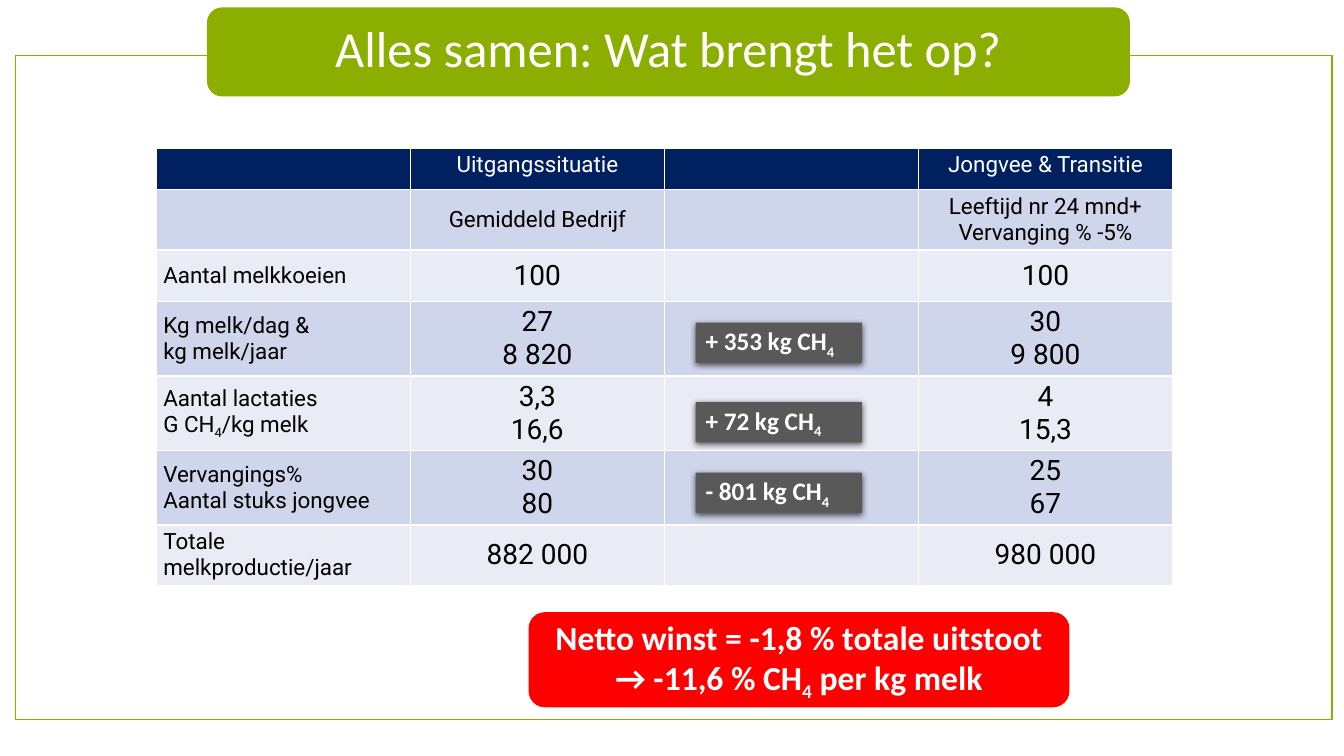
from dataclasses import dataclass

from lxml import etree
from pptx import Presentation
from pptx.dml.color import RGBColor
from pptx.enum.shapes import MSO_SHAPE
from pptx.enum.text import MSO_ANCHOR, MSO_AUTO_SIZE, PP_ALIGN
from pptx.oxml.ns import qn
from pptx.util import Inches, Pt

RECT, ROUND = MSO_SHAPE.RECTANGLE, MSO_SHAPE.ROUNDED_RECTANGLE
LEFT, CENTER = PP_ALIGN.LEFT, PP_ALIGN.CENTER
MIDDLE, TOP = MSO_ANCHOR.MIDDLE, MSO_ANCHOR.TOP
FIXED = MSO_AUTO_SIZE.NONE


@dataclass
class Theme:
    green: str = "8BAE00"
    navy: str = "002060"
    bands: tuple = ("E9EBF5", "CFD5EA")
    red: str = "FF0000"
    gray: str = "595959"
    white: str = "FFFFFF"
    black: str = "000000"
    head: str = "Calibri"
    body: str = "Roboto"
    title: int = 36
    banner: int = 24
    tag: int = 18
    value: int = 20
    label: int = 16


theme = Theme()
deck = Presentation()
deck.slide_width, deck.slide_height = Inches(13.33), Inches(7.5)
wide, high = deck.slide_width / 100, deck.slide_height / 100
slide = deck.slides.add_slide(deck.slide_layouts[5])


def block(kind, left, top, width, height, fill, line):
    shape = slide.shapes.add_shape(
        kind, int(left * wide), int(top * high), int(width * wide), int(height * high))
    shape.shadow.inherit = False
    if fill:
        shape.fill.solid()
        shape.fill.fore_color.rgb = RGBColor.from_string(fill)
    else:
        shape.fill.background()
    if line:
        shape.line.color.rgb = RGBColor.from_string(line)
        shape.line.width = Pt(1)
    else:
        shape.line.fill.background()
    return shape


def write(frame, text, font, size, color, bold, align):
    frame.word_wrap = True
    for row, line in enumerate(text.split("\n")):
        para = frame.add_paragraph() if row else frame.paragraphs[0]
        para.alignment = align
        for turn, part in enumerate(line.split("_")):
            if part:
                run = para.add_run()
                run.text = part
                if turn % 2:
                    run.font._element.set("baseline", "-25000")
        para.font.name, para.font.size, para.font.bold = font, Pt(size), bold
        para.font.color.rgb = RGBColor.from_string(color)


block(RECT, 1.13, 7.33, 97.97, 87.87, None, theme.green)
bar = block(ROUND, 15.45, 1.07, 68.57, 11.6, theme.green, theme.green)

title = slide.shapes.title
bar.element.addnext(title.element)
title.left, title.top = int(15.75 * wide), int(1.6 * high)
title.width, title.height = int(67.97 * wide), int(10.4 * high)
frame = title.text_frame
frame.auto_size, frame.vertical_anchor = FIXED, MIDDLE
frame.margin_left = frame.margin_right = Inches(0.35)
frame.margin_top = frame.margin_bottom = 0
write(frame, "Alles samen: Wat brengt het op?", theme.head, theme.title, theme.white, False, CENTER)
frame.paragraphs[0].line_spacing = 0.9

rows = [
    (0.41, "", "Uitgangssituatie", "Jongvee & Transitie"),
    (0.6, "", "Gemiddeld Bedrijf", "Leeftijd nr 24 mnd+ Vervanging % -5%"),
    (0.51, "Aantal melkkoeien", "100", "100"),
    (0.74, "Kg melk/dag &\nkg melk/jaar", "27\n8 820", "30\n9 800"),
    (0.74, "Aantal lactaties\nG CH_4_/kg melk", "3,3\n16,6", "4\n15,3"),
    (0.74, "Vervangings%\nAantal stuks jongvee", "30\n80", "25\n67"),
    (0.6, "Totale melkproductie/jaar", "882 000", "980 000"),
]
table = slide.shapes.add_table(
    len(rows), 4, int(11.63 * wide), int(19.6 * high), int(75.62 * wide), int(57.87 * high)).table
for row, (tall, label, before, after) in enumerate(rows):
    table.rows[row].height = Inches(tall)
    for col, text in enumerate((label, before, "", after)):
        cell = table.cell(row, col)
        cell.fill.solid()
        cell.fill.fore_color.rgb = RGBColor.from_string(theme.bands[row % 2] if row else theme.navy)
        cell.margin_left = cell.margin_right = Inches(0.07)
        cell.margin_top = cell.margin_bottom = Inches(0.04)
        cell.vertical_anchor = MIDDLE if row else TOP
        if text:
            size = theme.value if row > 1 and col else theme.label
            color = theme.black if row else theme.white
            write(cell.text_frame, text, theme.body, size, color, False, CENTER if col else LEFT)

banner = block(ROUND, 39.38, 81.07, 40.14, 12.4, theme.red, theme.red)
banner.text_frame.vertical_anchor = MIDDLE
write(banner.text_frame, "Netto winst = -1,8 % totale uitstoot\n→ -11,6 % CH_4_ per kg melk",
      theme.head, theme.banner, theme.white, True, CENTER)

tags = [(62.53, "- 801 kg CH_4"), (42.67, "+ 353 kg CH_4"), (53.2, "+ 72 kg CH_4")]
for top, text in tags:
    tag = block(RECT, 51.76, top, 12.38, 5.33, theme.gray, None)
    tag.text_frame.vertical_anchor = MIDDLE
    write(tag.text_frame, text, theme.head, theme.tag, theme.white, True, LEFT)
    glow = etree.SubElement(
        tag.element.spPr.find(qn("a:effectLst")), qn("a:outerShdw"),
        blurRad=str(Pt(4.5)), dist=str(Pt(1.5)), dir="5400000", rotWithShape="0")
    shade = etree.SubElement(glow, qn("a:srgbClr"), val=theme.black)
    etree.SubElement(shade, qn("a:alpha"), val="63000")

deck.save("out.pptx")
